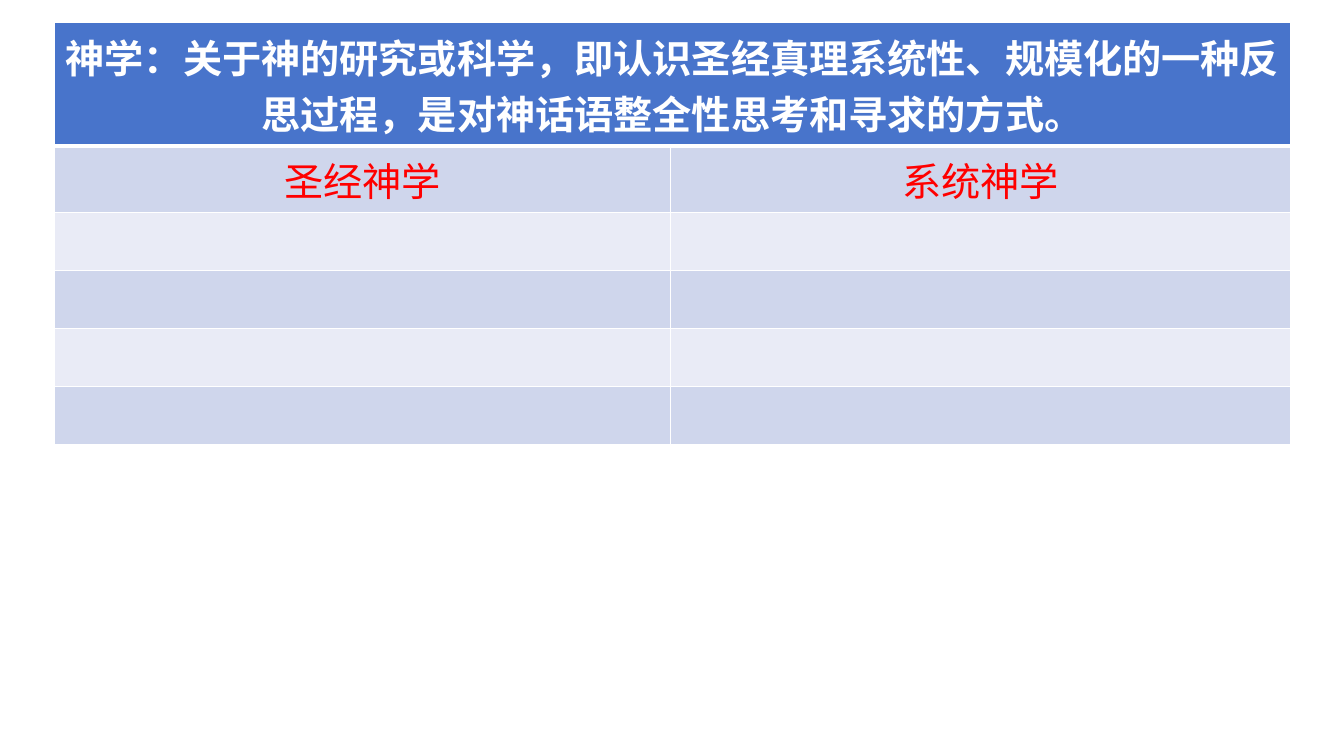
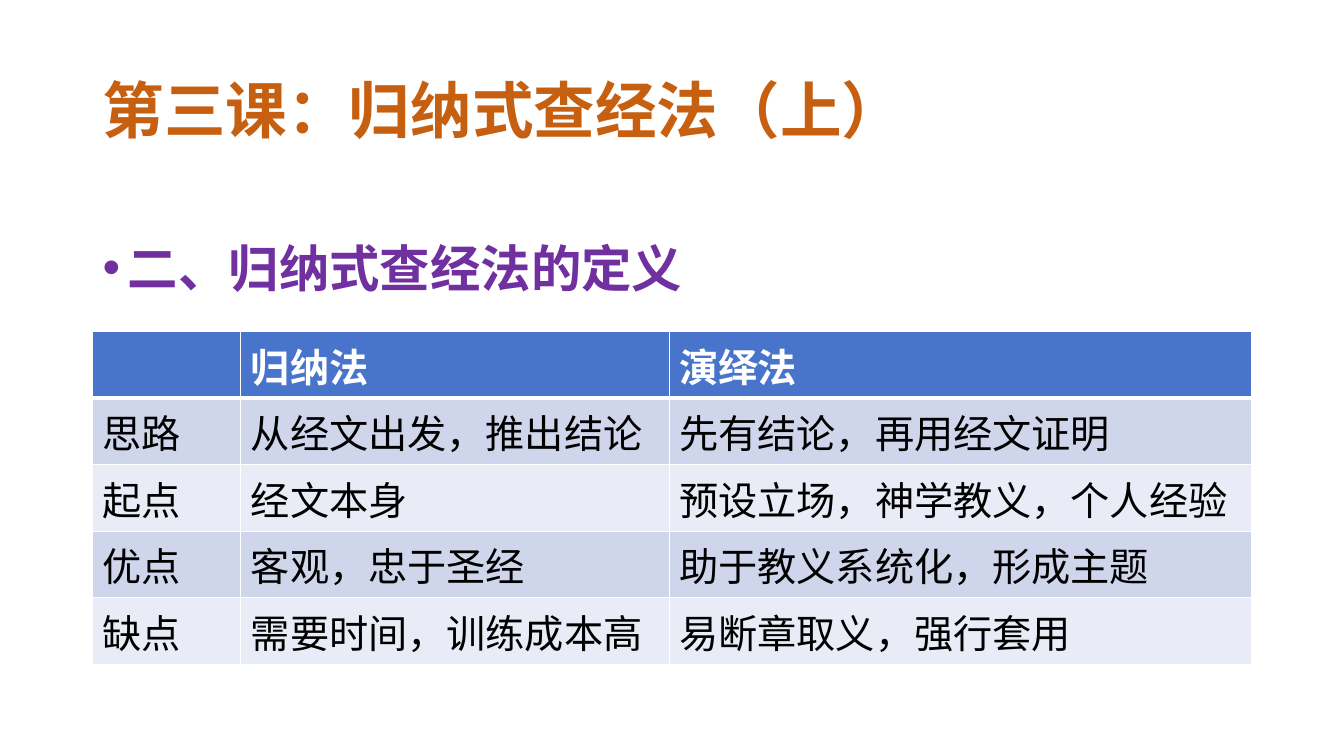
from dataclasses import dataclass

from lxml.etree import SubElement
from pptx import Presentation
from pptx.dml.color import RGBColor
from pptx.enum.lang import MSO_LANGUAGE_ID as Lang
from pptx.enum.text import MSO_ANCHOR as Anchor, PP_ALIGN as Align
from pptx.oxml.ns import qn
from pptx.slide import Slide
from pptx.table import _Cell as Cell
from pptx.text.text import _Paragraph as Para
from pptx.util import Inches, Length, Pt

WHITE = RGBColor(0xFF, 0xFF, 0xFF)
BLACK = RGBColor(0x00, 0x00, 0x00)
RED = RGBColor(0xFF, 0x00, 0x00)
BLUE = RGBColor(0x48, 0x74, 0xCB)
DARK = RGBColor(0xCF, 0xD6, 0xEC)
PALE = RGBColor(0xE9, 0xEB, 0xF6)
RUST = RGBColor(0xC6, 0x5F, 0x10)
PLUM = RGBColor(0x70, 0x30, 0xA0)

FONT = "Calibri"
COLS, ROWS = 133.33, 75
THIN, THICK = Pt(1), Pt(3)


def unit(n: float) -> Length:
    """Length of n grid steps, ten to the inch."""
    return Inches(n / 10)


@dataclass(frozen=True)
class Style:
    size: float
    color: RGBColor
    bold: bool = False


@dataclass(frozen=True)
class Box:
    left: float
    top: float
    width: float
    height: float


@dataclass(frozen=True)
class Grid:
    left: float
    top: float
    cols: list[float]
    rows: list[float]
    cells: list[list[str]]
    ink: RGBColor = BLACK
    align: Align = Align.LEFT
    anchor: Anchor = Anchor.TOP
    span: bool = False


TITLE = Style(44, RUST, True)
POINT = Style(36, PLUM, True)
HEAD = Style(28, WHITE, True)


def write(para: Para, text: str, style: Style) -> None:
    run = para.add_run()
    run.text = text
    font = run.font
    font.name, font.size, font.bold = FONT, Pt(style.size), style.bold
    font.color.rgb = style.color
    font.language_id = Lang.SIMPLIFIED_CHINESE


def add_text(slide: Slide, box: Box, text: str, style: Style,
             anchor: Anchor, space: float) -> Para:
    shape = slide.shapes.add_textbox(unit(box.left), unit(box.top),
                                     unit(box.width), unit(box.height))
    frame = shape.text_frame
    frame.word_wrap = True
    frame.vertical_anchor = anchor
    para = frame.paragraphs[0]
    para.line_spacing = space
    write(para, text, style)
    return para


def add_bullet(para: Para) -> None:
    props = para._p.get_or_add_pPr()
    props.set("marL", str(Inches(0.25)))
    props.set("indent", str(-Inches(0.25)))
    SubElement(props, qn("a:buFont"), typeface="Arial")
    SubElement(props, qn("a:buChar"), char="•")


def add_edges(cell: Cell, row: int) -> None:
    """White edges, with a thick one between the head and the body."""
    props = cell._tc.get_or_add_tcPr()
    wide = {"T": row == 1, "B": row == 0}
    for side in "LRTB":
        width = THICK if wide.get(side) else THIN
        line = SubElement(props, qn(f"a:ln{side}"), w=str(width))
        fill = SubElement(line, qn("a:solidFill"))
        SubElement(fill, qn("a:srgbClr"), val=str(WHITE))


def add_grid(slide: Slide, grid: Grid) -> None:
    table = slide.shapes.add_table(
        len(grid.rows), len(grid.cols), unit(grid.left), unit(grid.top),
        unit(sum(grid.cols)), unit(sum(grid.rows))).table
    for col, width in zip(table.columns, grid.cols):
        col.width = unit(width)
    for row, height in zip(table.rows, grid.rows):
        row.height = unit(height)
    if grid.span:
        table.cell(0, 0).merge(table.cell(0, len(grid.cols) - 1))
    body = Style(HEAD.size, grid.ink)
    for r, texts in enumerate(grid.cells):
        for c, text in enumerate(texts):
            cell = table.cell(r, c)
            add_edges(cell, r)
            cell.fill.solid()
            cell.fill.fore_color.rgb = (
                BLUE if r == 0 else DARK if r % 2 else PALE)
            cell.vertical_anchor = grid.anchor
            para = cell.text_frame.paragraphs[0]
            para.alignment = grid.align
            if text:
                write(para, text, body if r else HEAD)


FIELDS = Grid(
    5.35, 2.25, [61.2, 61.5], [12.1, 6.6] + [5.75] * 4,
    [["神学：关于神的研究或科学，即认识圣经真理系统性、规模化的一种反思过程，"
      "是对神话语整全性思考和寻求的方式。", ""],
     ["圣经神学", "系统神学"]] + [["", ""]] * 4,
    RED, Align.CENTER, Anchor.MIDDLE, True)

METHODS = Grid(
    9.2, 32.9, [14.7, 42.5, 57.8], [6.6] * 5,
    [["", "归纳法", "演绎法"],
     ["思路", "从经文出发，推出结论", "先有结论，再用经文证明"],
     ["起点", "经文本身", "预设立场，神学教义，个人经验"],
     ["优点", "客观，忠于圣经", "助于教义系统化，形成主题"],
     ["缺点", "需要时间，训练成本高", "易断章取义，强行套用"]])


def main() -> None:
    deck = Presentation()
    deck.slide_width, deck.slide_height = unit(COLS), unit(ROWS)
    blank = deck.slide_layouts[6]

    add_grid(deck.slides.add_slide(blank), FIELDS)

    lesson = deck.slides.add_slide(blank)
    add_text(lesson, Box(9.2, 4, 115, 14.5), "第三课：归纳式查经法（上）",
             TITLE, Anchor.MIDDLE, 0.9)
    point = add_text(lesson, Box(9.2, 20, 115, 47.6), "二、归纳式查经法的定义",
                     POINT, Anchor.TOP, 1.5)
    point.space_before = Pt(4)
    add_bullet(point)
    add_grid(lesson, METHODS)

    deck.save("out.pptx")


if __name__ == "__main__":
    main()
